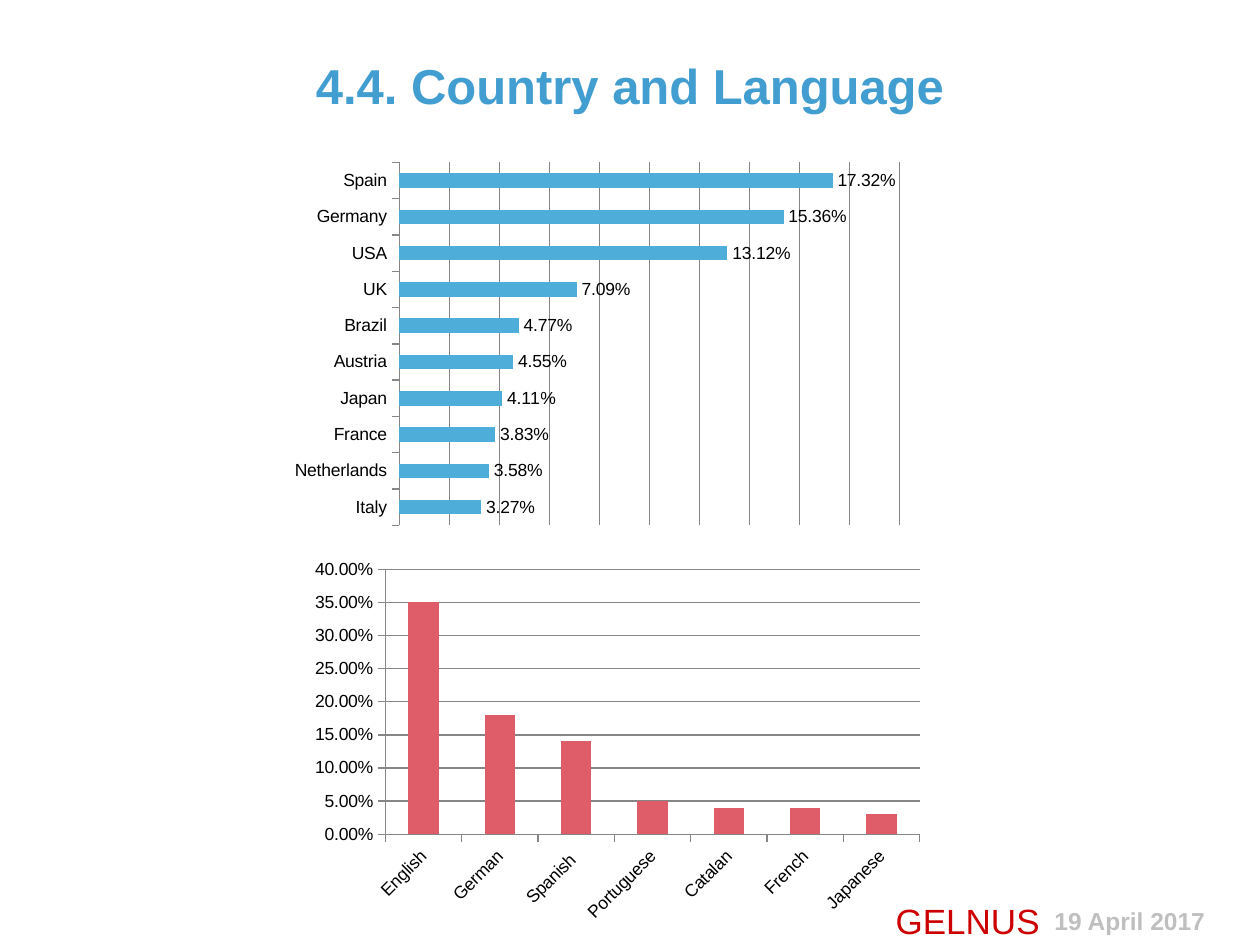
from pptx import Presentation
from pptx.chart.data import CategoryChartData
from pptx.dml.color import RGBColor
from pptx.enum.chart import XL_CHART_TYPE, XL_LABEL_POSITION, XL_TICK_MARK
from pptx.enum.text import MSO_ANCHOR, PP_ALIGN
from pptx.util import Inches, Pt

BAR, COLUMN = XL_CHART_TYPE.BAR_CLUSTERED, XL_CHART_TYPE.COLUMN_CLUSTERED
OUTSIDE, NO_TICK = XL_TICK_MARK.OUTSIDE, XL_TICK_MARK.NONE
OUTSIDE_END = XL_LABEL_POSITION.OUTSIDE_END
LEFT, CENTER = PP_ALIGN.LEFT, PP_ALIGN.CENTER
TOP, MIDDLE = MSO_ANCHOR.TOP, MSO_ANCHOR.MIDDLE

FONT = "Arial"
PERCENT = "0.00%"
COLORS = {
    "title": "429ED0", "country": "4FAED9", "language": "DF5D69",
    "date": "BFBFBF", "project": "CC0000", "text": "000000", "line": "868686",
}
COUNTRIES = {
    "Spain": 0.1732, "Germany": 0.1536, "USA": 0.1312, "UK": 0.0709,
    "Brazil": 0.0477, "Austria": 0.0455, "Japan": 0.0411,
    "France": 0.0383, "Netherlands": 0.0358, "Italy": 0.0327,
}
LANGUAGES = {
    "English": 0.35, "German": 0.18, "Spanish ": 0.14, "Portuguese": 0.05,
    "Catalan": 0.04, "French": 0.04, "Japanese": 0.03,
}


def rgb(name):
    return RGBColor.from_string(COLORS[name])


def add_share_chart(kind, left, top, shares, color, top_value, step):
    """Add a one-series percentage chart and return it."""
    data = CategoryChartData(number_format=PERCENT)
    data.categories = list(shares)
    data.add_series("Series 1", list(shares.values()))
    chart = s.shapes.add_chart(kind, Inches(left), Inches(top),
                               Inches(5), Inches(3), data).chart
    chart.has_legend = False
    chart.has_title = False
    chart.font.name = FONT
    chart.font.size = Pt(10)
    chart.font.color.rgb = rgb("text")

    plot = chart.plots[0]
    plot.gap_width = 150
    plot.vary_by_categories = False
    fill = plot.series[0].format.fill
    fill.solid()
    fill.fore_color.rgb = rgb(color)

    values = chart.value_axis
    values.minimum_scale = 0
    values.maximum_scale = top_value
    values.major_unit = step
    values.has_major_gridlines = True
    values.tick_labels.number_format = PERCENT
    values.tick_labels.number_format_is_linked = False
    for axis in (chart.category_axis, values):
        axis.major_tick_mark = OUTSIDE
        axis.minor_tick_mark = NO_TICK
        axis.format.line.color.rgb = rgb("line")
    values.major_gridlines.format.line.color.rgb = rgb("line")
    return chart


prs = Presentation()
prs.slide_width = Inches(10)
prs.slide_height = Inches(7.5)
s = prs.slides.add_slide(prs.slide_layouts[6])

# Title and footer
for text, box, size, color, bold, align, anchor, spacing in (
    ("4.4. Country and Language", (0.5, 0.05, 9, 1.25), 28, "title", True, CENTER, MIDDLE, 1),
    ("19 April 2017", (8.27, 7.14, 1.69, 0.34), 14, "date", True, LEFT, TOP, 1),
    ("GELNUS", (6.97, 7.13, 1.42, 0.4), 20, "project", False, CENTER, TOP, 0.9),
):
    tf = s.shapes.add_textbox(*map(Inches, box)).text_frame
    tf.word_wrap = True
    tf.vertical_anchor = anchor
    tf.text = text
    p = tf.paragraphs[0]
    p.alignment = align
    p.line_spacing = spacing
    r = p.runs[0]
    r.font.name = FONT
    r.font.size = Pt(size)
    r.font.bold = bold
    r.font.color.rgb = rgb(color)

# Countries, largest at the top and labelled with their share
chart = add_share_chart(BAR, 2.24, 1.23, COUNTRIES, "country", 0.2, 0.02)
chart.category_axis.reverse_order = True
chart.value_axis.visible = False
labels = chart.plots[0].series[0].data_labels
labels.show_value = True
labels.position = OUTSIDE_END
labels.number_format = PERCENT
labels.number_format_is_linked = False

# Languages
add_share_chart(COLUMN, 2.4, 4.38, LANGUAGES, "language", 0.4, 0.05)

prs.save("out.pptx")
